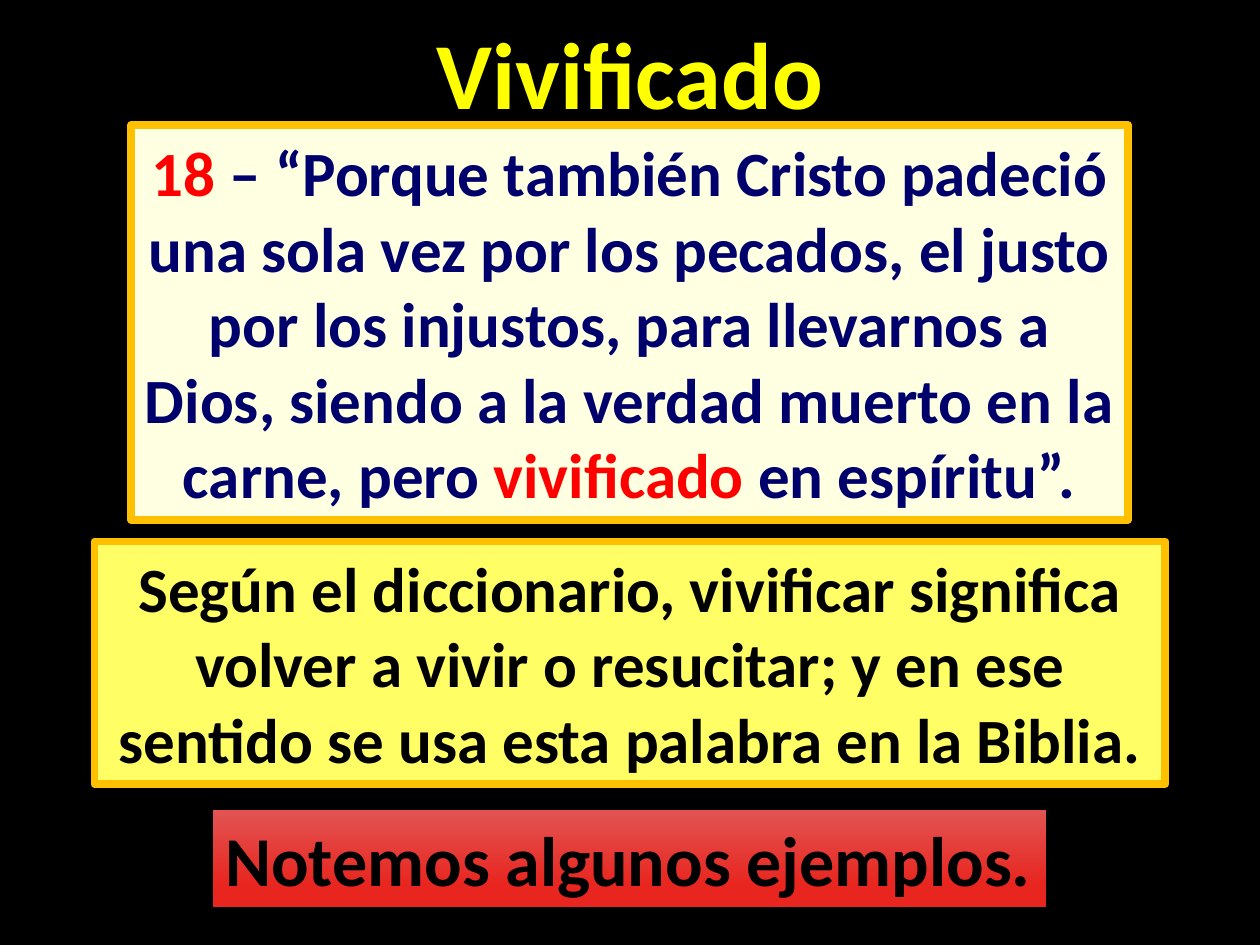
from dataclasses import dataclass
from typing import Optional

from pptx import Presentation
from pptx.dml.color import RGBColor
from pptx.enum.shapes import MSO_SHAPE
from pptx.enum.text import MSO_ANCHOR, MSO_AUTO_SIZE, PP_ALIGN
from pptx.util import Pt

BLACK = RGBColor(0x00, 0x00, 0x00)
YELLOW = RGBColor(0xFF, 0xFF, 0x00)
RED = RGBColor(0xFF, 0x00, 0x00)
NAVY = RGBColor(0x00, 0x00, 0x6C)
CREAM = RGBColor(0xFF, 0xFF, 0xE1)
LEMON = RGBColor(0xFF, 0xFF, 0x65)
GOLD = RGBColor(0xFF, 0xC0, 0x00)
RED_TOP = RGBColor(0xE2, 0x54, 0x52)
RED_BOTTOM = RGBColor(0xE8, 0x25, 0x1F)
FONT = "Calibri"


@dataclass(frozen=True)
class Box:
    """A rectangle with text; two fills make a vertical gradient."""
    left: float
    top: float
    width: float
    height: float
    runs: tuple[tuple[str, RGBColor], ...]
    fills: tuple[RGBColor, ...]
    line: Optional[RGBColor] = None
    size: float = 36
    align: PP_ALIGN = PP_ALIGN.CENTER
    wrap: bool = True


BOXES = (
    Box(75, 71.5, 569.5, 225.5, (
        ("18 ", RED),
        ("– “Porque también Cristo padeció una sola vez por los pecados, "
         "el justo por los injustos, para llevarnos a Dios, siendo a la "
         "verdad muerto en la carne, pero ", NAVY),
        ("vivificado ", RED),
        ("en espíritu”.", NAVY),
    ), (CREAM,), GOLD),
    Box(54, 309.5, 612, 138.5, (
        ("Según el diccionario, vivificar significa volver a vivir o "
         "resucitar; y en ese sentido se usa esta palabra en la Biblia.", BLACK),
    ), (LEMON,), GOLD),
    Box(121.7, 463, 476, 55.5, (("Notemos algunos ejemplos.", BLACK),),
        (RED_TOP, RED_BOTTOM), size=40, align=PP_ALIGN.LEFT, wrap=False),
)


def write_text(sp, runs, *, size: float, align=PP_ALIGN.CENTER, wrap=True) -> None:
    tf = sp.text_frame
    tf.word_wrap = wrap
    tf.auto_size = MSO_AUTO_SIZE.SHAPE_TO_FIT_TEXT
    tf.vertical_anchor = MSO_ANCHOR.MIDDLE
    p = tf.paragraphs[0]
    p.alignment = align
    for text, color in runs:
        r = p.add_run()
        r.text = text
        r.font.name = FONT
        r.font.size = Pt(size)
        r.font.bold = True
        r.font.color.rgb = color


def draw_box(slide, box: Box) -> None:
    sp = slide.shapes.add_shape(MSO_SHAPE.RECTANGLE, Pt(box.left), Pt(box.top),
                                Pt(box.width), Pt(box.height))
    sp.shadow.inherit = False
    if len(box.fills) == 1:
        sp.fill.solid()
        sp.fill.fore_color.rgb = box.fills[0]
    else:
        sp.fill.gradient()
        sp.fill.gradient_angle = 270
        for stop, color, position in zip(sp.fill.gradient_stops, box.fills, (0, 0.78)):
            stop.color.rgb = color
            stop.position = position
    if box.line is None:
        sp.line.fill.background()
    else:
        sp.line.color.rgb = box.line
        sp.line.width = Pt(4.5)
    write_text(sp, box.runs, size=box.size, align=box.align, wrap=box.wrap)


def main() -> None:
    prs = Presentation()
    prs.slide_width, prs.slide_height = Pt(720), Pt(540)
    slide = prs.slides.add_slide(prs.slide_layouts[5])
    slide.background.fill.solid()
    slide.background.fill.fore_color.rgb = BLACK

    title = slide.shapes.title
    title.left, title.top, title.width, title.height = Pt(240), Pt(4.5), Pt(240), Pt(72.5)
    write_text(title, (("Vivificado", YELLOW),), size=54, wrap=False)

    for box in BOXES:
        draw_box(slide, box)
    prs.save("out.pptx")


if __name__ == "__main__":
    main()
